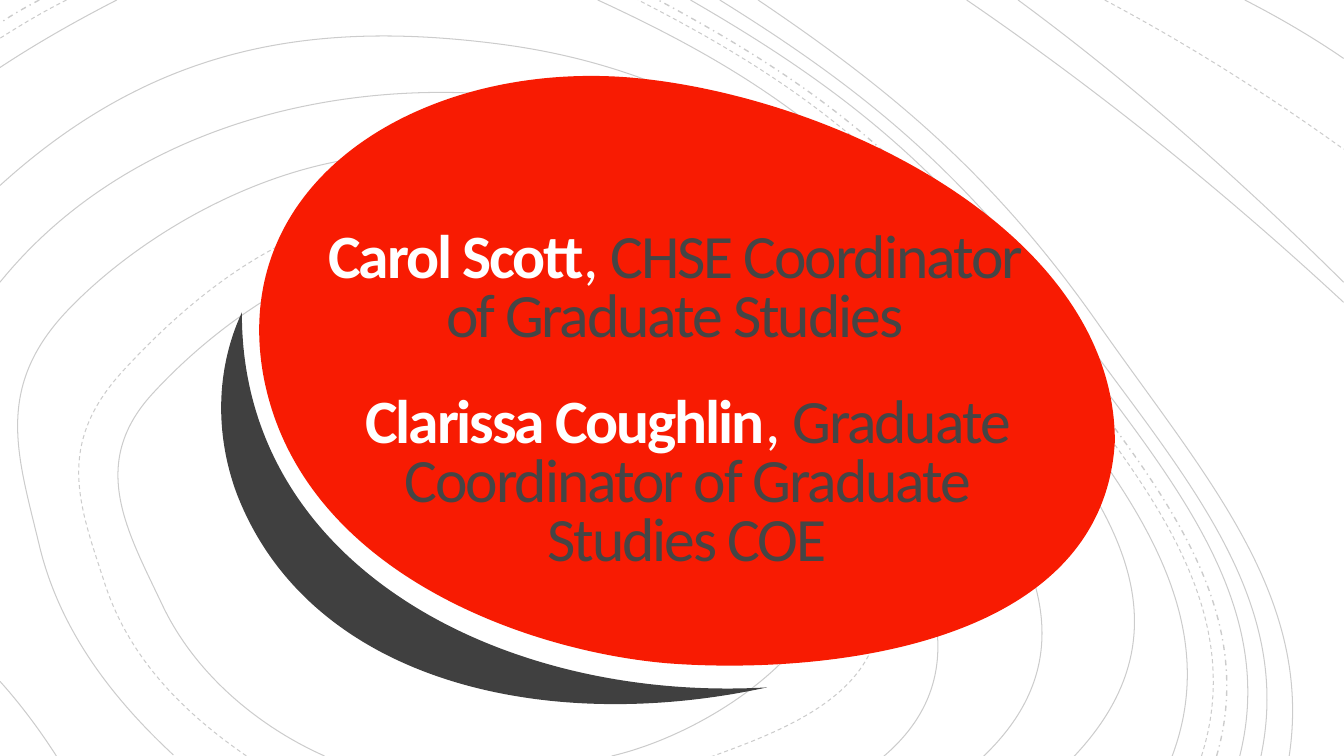
from pptx import Presentation
from pptx import util as u
from pptx.dml.color import RGBColor
from pptx.enum import dml, text
from pptx.oxml import ns
from lxml import etree

SOLID, DASH, DASHDOT = dml.MSO_LINE.SOLID, dml.MSO_LINE.DASH, dml.MSO_LINE.DASH_DOT


def rgb(value):
    return RGBColor.from_string(value)


def add_curve(pts, closed=False):
    fb = s.shapes.build_freeform(*pts[0], scale=u.Pt(0.72))
    fb.add_line_segments(pts[1:], close=closed)
    sp = fb.convert_to_shape()
    sp.shadow.inherit = False
    lines = list(sp.element.iter(ns.qn("a:lnTo")))
    for i in range(0, len(lines), 3):
        bez = etree.Element(ns.qn("a:cubicBezTo"))
        lines[i].addprevious(bez)
        for ln in lines[i:i + 3]:
            bez.append(ln[0])
            ln.getparent().remove(ln)
    return sp


prs = Presentation()
prs.slide_width, prs.slide_height = u.Pt(960), u.Pt(540)
s = prs.slides.add_slide(prs.slide_layouts[6])

loops = [
    (SOLID, [(-7, 945), (876, 751), (738, 315), (412, 153), (68, 307), (39, 541), (172, 749), (319, 801)]),
    (SOLID, [(310, 649), (607, 750), (825, 529), (480, 248), (151, 391), (161, 600), (322, 750), (466, 735)]),
    (DASH, [(567, 748), (705, 751), (867, 638), (817, 440), (443, 209), (122, 368), (104, 579), (246, 751),
            (404, 784)]),
    (SOLID, [(63, 1041), (975, 751), (838, 306), (458, 92), (0, 280), (-97, 777)]),
    (SOLID, [(204, 1087), (1065, 751), (944, 307), (498, 44), (0, 184), (-262, 734)]),
]
inner = [(648, 1127), (1163, 750), (963, 287), (593, 0), (248, -43)]
outer = [(970, 1122), (1279, 750), (1090, 322), (752, 0), (445, -113)]
for t, dash in ((0, SOLID), (0.25, DASH), (0.38, DASHDOT), (0.58, SOLID), (0.76, SOLID), (1, SOLID)):
    loops.append((dash, [(a + (c - a) * t, b + (d - b) * t) for (a, b), (c, d) in zip(inner, outer)]))

orbits = []
for dash, knots in loops:
    pts = [knots[1]]
    for (ax, ay), (bx, by), (cx, cy), (dx, dy) in zip(knots, knots[1:], knots[2:], knots[3:]):
        pts += [(bx + (cx - ax) / 5, by + (cy - ay) / 5), (cx - (dx - bx) / 5, cy - (dy - by) / 5), (cx, cy)]
    orbits.append((dash, pts))

arcs = [(SOLID, 0, 676, 56, 750)]
arcs += [(dash, x, 0, 0, 0.58 * x) for dash, x in ((SOLID, 116), (DASH, 66), (DASHDOT, 39))]
arcs += [(dash, x, 0, 1333, y) for dash, x, y in
         ((SOLID, 959, 300), (SOLID, 1010, 280), (DASH, 1096, 148), (SOLID, 1235, 58))]
for dash, x, y, x2, y2 in arcs:
    steps = ((0, 0), (0.34, 0.29), (0.67, 0.62), (1, 1))
    orbits.append((dash, [(x + (x2 - x) * h, y + (y2 - y) * v) for h, v in steps]))

for dash, pts in orbits:
    sp = add_curve([(round(x), round(y)) for x, y in pts])
    sp.fill.background()
    sp.line.width = u.Pt(1 if dash == DASHDOT else 0.75)
    sp.line.dash_style = dash
    sp.line.color.rgb = rgb("000000")
    clr = sp.element.spPr.find(".//" + ns.qn("a:ln")).find(".//" + ns.qn("a:srgbClr"))
    etree.SubElement(clr, ns.qn("a:alpha"), val="20000")

crescent = [(240, 310), (239, 562), (500, 697), (761, 682), (540, 730), (307, 676), (235, 490),
            (213, 431), (214, 366)]
oval = [(261, 371), (227, 175), (423, 60), (626, 77), (829, 95), (1106, 231), (1106, 438),
        (1094, 648), (803, 669), (662, 658), (521, 646), (296, 566)]
for pts, color in ((crescent, "404040"), (oval, "F81B02")):
    sp = add_curve(pts + pts[:1], closed=True)
    sp.fill.solid()
    sp.fill.fore_color.rgb = rgb(color)
    sp.line.fill.background()

people = [
    (208, 118.8, "Carol Scott", "FFFFFF", "CHSE Coordinator of Graduate Studies"),
    (216.7, 278.6, "Clarissa Coughlin", "FFFEFF", "Graduate Coordinator of Graduate Studies COE"),
]
for left, top, name, comma_color, role in people:
    sp = s.shapes.add_textbox(u.Pt(left), u.Pt(top), u.Pt(548), u.Pt(131))
    tf = sp.text_frame
    tf.word_wrap = True
    tf.vertical_anchor = text.MSO_ANCHOR.BOTTOM
    tf.margin_left = tf.margin_right = tf.margin_top = u.Pt(18)
    tf.margin_bottom = u.Pt(0)
    p = tf.paragraphs[0]
    p.alignment = text.PP_ALIGN.CENTER
    p.line_spacing = 0.8
    for words, color, bold in ((name, "FFFFFF", True), (", ", comma_color, False), (role, "454545", False)):
        r = p.add_run()
        r.text = words
        r.font.name = "Calibri"
        r.font.size = u.Pt(44)
        r.font.bold = bold
        r.font.color.rgb = rgb(color)
    for rpr in sp.element.iter(ns.qn("a:rPr")):
        rpr.set("spc", "-150")

prs.save("out.pptx")
